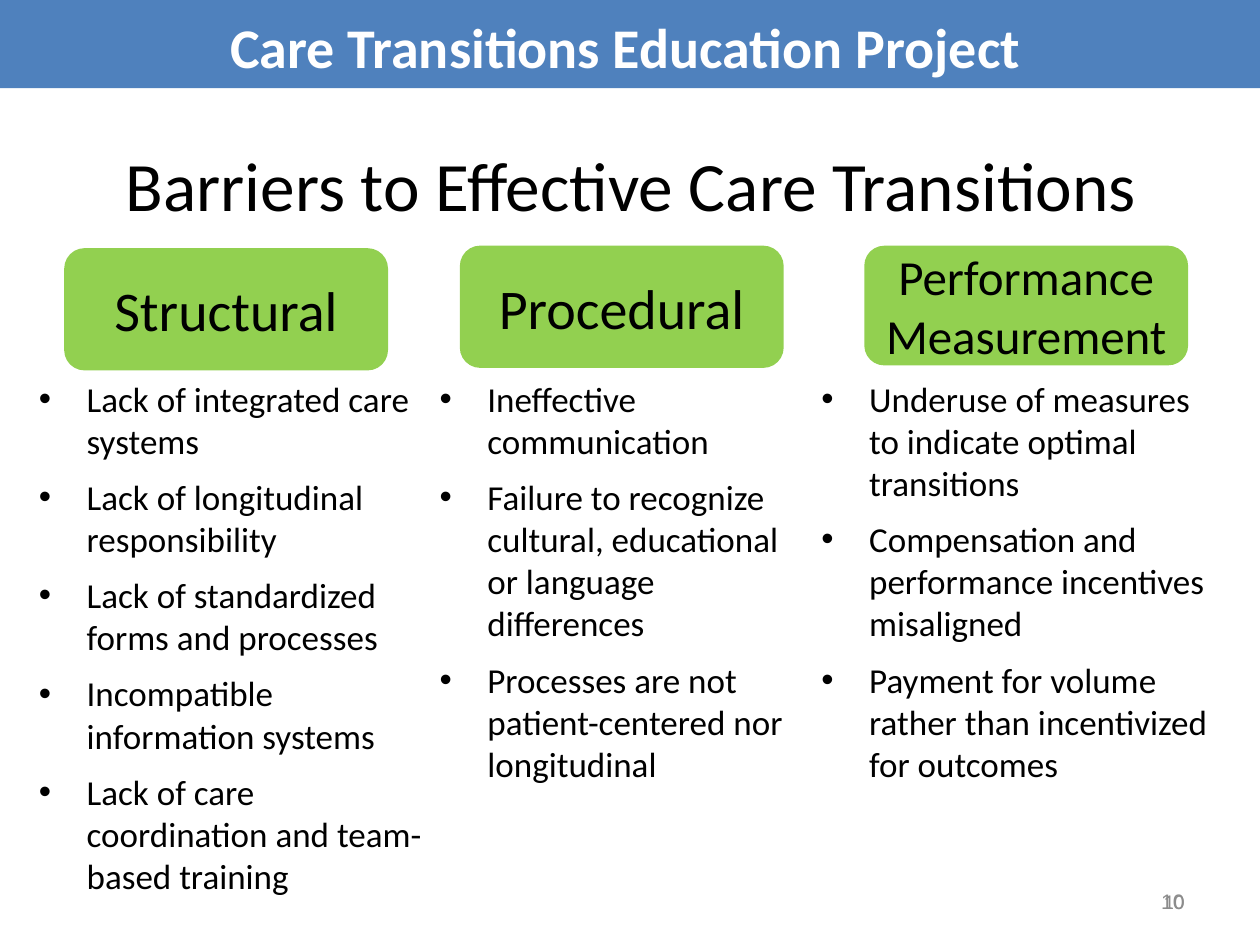
from dataclasses import dataclass

from lxml import etree
from pptx import Presentation
from pptx.dml.color import RGBColor
from pptx.enum.shapes import MSO_SHAPE
from pptx.enum.text import MSO_ANCHOR, PP_ALIGN
from pptx.oxml.ns import qn
from pptx.util import Inches, Pt

RECT, ROUNDED = MSO_SHAPE.RECTANGLE, MSO_SHAPE.ROUNDED_RECTANGLE
LEFT, CENTER, RIGHT = PP_ALIGN.LEFT, PP_ALIGN.CENTER, PP_ALIGN.RIGHT
TOP, MIDDLE = MSO_ANCHOR.TOP, MSO_ANCHOR.MIDDLE


@dataclass(frozen=True)
class Theme:
    font: str = "Calibri"
    number_font: str = "Arial"
    banner: RGBColor = RGBColor(0x4F, 0x81, 0xBD)
    header: RGBColor = RGBColor(0x92, 0xD0, 0x50)
    text: RGBColor = RGBColor(0, 0, 0)
    inverse: RGBColor = RGBColor(0xFF, 0xFF, 0xFF)
    muted: RGBColor = RGBColor(0x8C, 0x8C, 0x8C)
    title_size: float = 39.6
    banner_size: int = 32
    body_size: int = 20
    number_size: int = 12


THEME = Theme()
PROJECT = "Care Transitions Education Project"
TITLE = "Barriers to Effective Care Transitions"
PAGE_NUMBER = "10"
COLUMNS = [
    {
        "name": "Structural", "size": 32,
        "header": (0.51, 1.97, 2.57, 0.97), "body": (0.21, 2.95, 3.24, 4.25),
        "barriers": [
            "Lack of integrated care systems",
            "Lack of longitudinal responsibility",
            "Lack of standardized forms and processes",
            "Incompatible information systems",
            "Lack of care coordination and team-based training",
        ],
    },
    {
        "name": "Procedural", "size": 32,
        "header": (3.65, 1.95, 2.57, 0.97), "body": (3.39, 2.95, 3.07, 3.35),
        "barriers": [
            "Ineffective communication",
            "Failure to recognize cultural, educational or language differences",
            "Processes are not patient-centered nor longitudinal",
        ],
    },
    {
        "name": "Performance Measurement", "size": 28,
        "header": (6.86, 1.95, 2.57, 0.95), "body": (6.42, 2.95, 3.27, 3.35),
        "barriers": [
            "Underuse of measures to indicate optimal transitions",
            "Compensation and performance incentives misaligned",
            "Payment for volume rather than incentivized for outcomes",
        ],
    },
]


def write(sp, lines, size, color=THEME.text, align=CENTER, anchor=MIDDLE,
          font=THEME.font, bold=False):
    tf = sp.text_frame
    tf.word_wrap = True
    tf.vertical_anchor = anchor
    tf.text = "\n".join(lines)
    for p in tf.paragraphs:
        p.alignment = align
        p.font.name = font
        p.font.size = Pt(size)
        p.font.bold = bold
        p.font.color.rgb = color


def add_text(slide, box, lines, size, **style):
    sp = slide.shapes.add_textbox(*map(Inches, box))
    write(sp, lines, size, **style)
    return sp


def add_block(slide, kind, box, fill):
    sp = slide.shapes.add_shape(kind, *map(Inches, box))
    sp.shadow.inherit = False
    sp.fill.solid()
    sp.fill.fore_color.rgb = fill
    sp.line.fill.background()
    return sp


def add_bullets(sp):
    for p in sp.text_frame.paragraphs:
        p.space_before = p.space_after = Pt(4)
        pPr = p._p.get_or_add_pPr()
        pPr.set("marL", str(Inches(0.38)))
        pPr.set("indent", str(-Inches(0.38)))
        bullet_font = etree.Element(qn("a:buFont"), typeface="Arial")
        bullet = etree.Element(qn("a:buChar"), char="•")
        position = len(pPr.findall(qn("a:spcBef")) + pPr.findall(qn("a:spcAft")))
        pPr.insert(position, bullet_font)
        pPr.insert(position + 1, bullet)


def main():
    prs = Presentation()
    prs.slide_width, prs.slide_height = Inches(10), Inches(7.5)
    slide = prs.slides.add_slide(prs.slide_layouts[6])

    add_block(slide, RECT, (0, 0, 10, 0.7), THEME.banner)
    add_text(slide, (1.34, 0.05, 7.25, 0.63), [PROJECT], THEME.banner_size,
             color=THEME.inverse, anchor=TOP, bold=True)
    add_text(slide, (0.51, 0.83, 9, 1.25), [TITLE], THEME.title_size)

    for font in (THEME.font, THEME.number_font):
        add_text(slide, (7.17, 6.95, 2.33, 0.4), [PAGE_NUMBER], THEME.number_size,
                 color=THEME.muted, align=RIGHT, font=font)

    for column in COLUMNS:
        header = add_block(slide, ROUNDED, column["header"], THEME.header)
        write(header, [column["name"]], column["size"])
        body = add_text(slide, column["body"], column["barriers"], THEME.body_size,
                        align=LEFT, anchor=TOP)
        add_bullets(body)

    prs.save("out.pptx")


if __name__ == "__main__":
    main()
